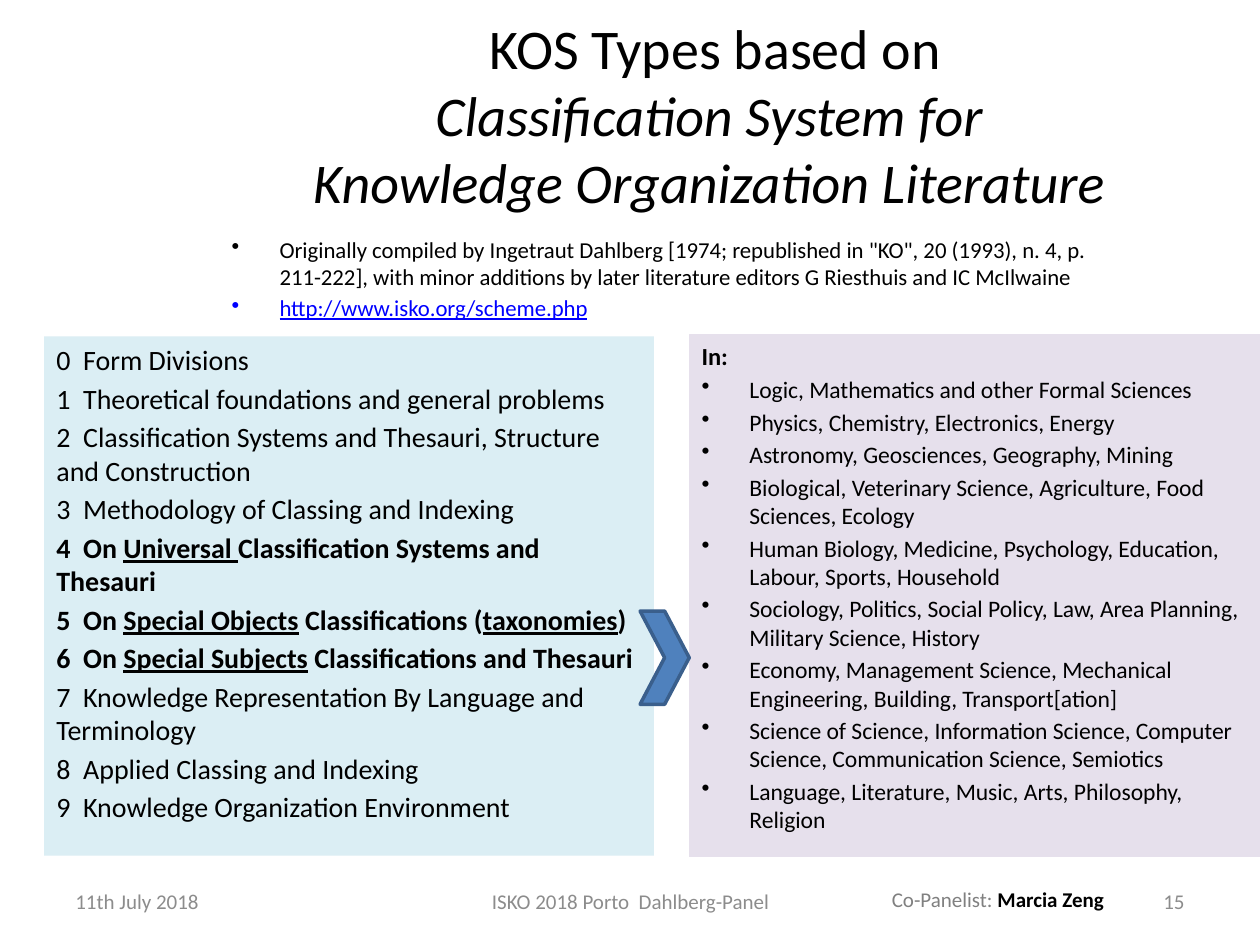
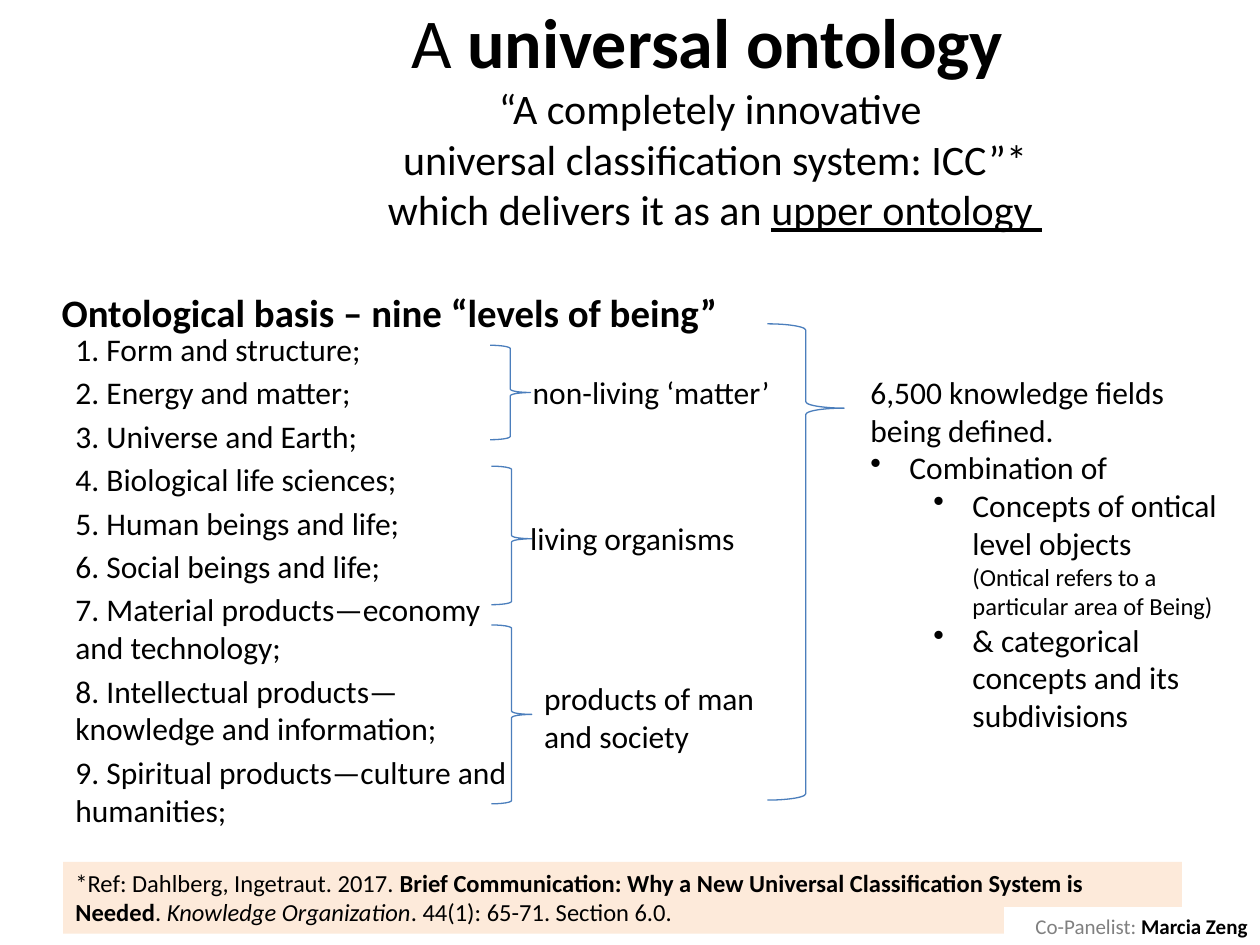
import pptx
import pptx.dml.color
import pptx.enum.shapes
import pptx.enum.text
import pptx.oxml
import pptx.oxml.ns
import pptx.util

Inches = pptx.util.Inches
Pt = pptx.util.Pt
RGB = pptx.dml.color.RGBColor
Align = pptx.enum.text.PP_ALIGN
Anchor = pptx.enum.text.MSO_ANCHOR
Preset = pptx.enum.shapes.MSO_SHAPE

FONT = "Calibri"
BLACK, WHITE = RGB(0, 0, 0), RGB(255, 255, 255)
FOOTER_GRAY, CREDIT_GRAY = RGB(0x8C, 0x8C, 0x8C), RGB(0x80, 0x80, 0x80)
LINK_BLUE = RGB(0, 0, 255)
PALE_BLUE, PALE_PURPLE = RGB(0xDB, 0xEE, 0xF4), RGB(0xE6, 0xE0, 0xEC)
PALE_ORANGE = RGB(0xFD, 0xEA, 0xDA)
CHEVRON_FILL, CHEVRON_EDGE = RGB(0x4F, 0x81, 0xBD), RGB(0x3A, 0x5F, 0x8C)
BRACE_BLUE = RGB(0x4B, 0x7E, 0xBC)

LIST_GAP = 0.176  # space before a list paragraph, as a share of its text size

BOLD = {"bold": True}
ITALIC = {"italic": True}
UNDERLINE = {"underline": True}
BOLD_UNDERLINE = {**BOLD, **UNDERLINE}

# A paragraph is a string or a list of spans; a span is a string or (text, format).
CREDIT = [[("Co-Panelist: ", {"color": CREDIT_GRAY}), ("Marcia Zeng", BOLD)]]

TYPES_TITLE = [["KOS Types based on\n",
                ("Classification System for \nKnowledge Organization Literature ", ITALIC)]]
TYPES_SOURCE = [
    'Originally compiled by Ingetraut Dahlberg [1974; republished in "KO", 20 (1993), n. 4, '
    "p. 211-222], with minor additions by later literature editors G Riesthuis and IC McIlwaine",
    [("http://www.isko.org/scheme.php", {"color": LINK_BLUE, **UNDERLINE})],
]
DIVISIONS = [
    "0  Form Divisions",
    "1  Theoretical foundations and general problems",
    "2  Classification Systems and Thesauri, Structure and Construction",
    "3  Methodology of Classing and Indexing",
    [("4  On ", BOLD), ("Universal ", BOLD_UNDERLINE),
     ("Classification Systems and Thesauri", BOLD)],
    [("5  On ", BOLD), ("Special Objects", BOLD_UNDERLINE), (" Classifications (", BOLD),
     ("taxonomies", BOLD_UNDERLINE), (")", BOLD)],
    [("6  On ", BOLD), ("Special Subjects", BOLD_UNDERLINE),
     (" Classifications and Thesauri", BOLD)],
    "7  Knowledge Representation By Language and Terminology",
    "8  Applied Classing and Indexing",
    "9  Knowledge Organization Environment",
]
SUBJECTS = [
    [("In:", {"size": Pt(14), **BOLD})],
    "Logic, Mathematics and other Formal Sciences",
    "Physics, Chemistry, Electronics, Energy",
    "Astronomy, Geosciences, Geography, Mining",
    "Biological, Veterinary Science, Agriculture, Food Sciences, Ecology",
    "Human Biology, Medicine, Psychology, Education, Labour, Sports, Household",
    "Sociology, Politics, Social Policy, Law, Area Planning, Military Science, History",
    "Economy, Management Science, Mechanical Engineering, Building, Transport[ation]",
    "Science of Science, Information Science, Computer Science, Communication Science, Semiotics",
    "Language, Literature, Music, Arts, Philosophy, Religion",
]
# text, left, width, alignment
FOOTERS = [
    ("11th July 2018", 0.5, 2.33, Align.LEFT),
    ("ISKO 2018 Porto  Dahlberg-Panel", 3.42, 3.17, Align.CENTER),
    ("15", 8.98, 0.52, Align.RIGHT),
]

SUBTITLE = {"size": Pt(24)}
ONTOLOGY_TITLE = [[
    "A ", ("universal ontology \n", BOLD),
    ("“A completely innovative \nuniversal classification system: ICC”*\n"
     "which delivers it as an ", SUBTITLE),
    ("upper ontology ", {**SUBTITLE, **UNDERLINE}),
]]
LEVELS_HEADING = [[("Ontological basis – nine “levels of being”", BOLD)]]
LEVELS = [
    "1. Form and structure;",
    "2. Energy and matter;",
    "3. Universe and Earth;",
    "4. Biological life sciences;",
    "5. Human beings and life;",
    "6. Social beings and life;",
    "7. Material products—economy and technology;",
    "8. Intellectual products—knowledge and information;",
    "9. Spiritual products—culture and humanities;",
]
# place, position of the brace point
BRACES = [
    ((3.89, 2.74, 0.32, 0.75), 0.5),
    ((3.9, 3.7, 0.32, 1.1), 0.524),
    ((3.9, 4.96, 0.32, 1.42), 0.5),
    ((6.09, 2.57, 0.61, 3.78), 0.177),
]
GROUP_LABELS = [
    ("non-living ‘matter’", (4.13, 2.91, 2.23, 0.4)),
    ("living organisms", (4.11, 4.07, 2.18, 0.4)),
    ("products of man and society", (4.22, 5.34, 2.27, 0.71)),
]
FIELDS = [
    "6,500 knowledge fields being defined.",
    "Combination of",
    ["Concepts of ontical level objects\n",
     ("(Ontical refers to a particular area of Being)", {"size": Pt(14)})],
    "& categorical concepts and its subdivisions",
]
FIELD_INDENTS = [None, 0.31, 0.81, 0.81]
REFERENCE = [[
    "*Ref: Dahlberg, Ingetraut. 2017. ",
    ("Brief Communication: Why a New Universal Classification System is Needed", BOLD),
    ". ", ("Knowledge Organization", ITALIC), ". 44(1): 65-71. Section 6.0.",
]]


def inches(place):
    return [Inches(value) for value in place]


def add_bullet(para, margin, hanging):
    properties = para._p.get_or_add_pPr()
    properties.set("marL", str(Inches(margin)))
    properties.set("indent", str(-Inches(hanging)))
    bullet = pptx.oxml.parse_xml(
        f'<a:buChar {pptx.oxml.ns.nsdecls("a")} char="•"/>')
    properties.append(bullet)


def add_span(para, text, style):
    """Add text in one format, turning newlines into line breaks."""
    for number, line in enumerate(text.split("\n")):
        if number:
            para.add_line_break()
        if not line:
            continue
        span = para.add_run()
        span.text = line
        for name, value in style.items():
            if name == "color":
                span.font.color.rgb = value
            else:
                setattr(span.font, name, value)


def add_text(page, place, paragraphs, size, color=BLACK, align=Align.LEFT,
             anchor=Anchor.TOP, fill=None, gap=0, indents=None, hanging=0):
    """Add a text box; indents holds one bullet margin, or None, per paragraph."""
    box = page.shapes.add_textbox(*inches(place))
    if fill is not None:
        box.fill.solid()
        box.fill.fore_color.rgb = fill
    frame = box.text_frame
    frame.word_wrap = True
    frame.vertical_anchor = anchor
    base = {"name": FONT, "size": Pt(size), "color": color}
    for number, content in enumerate(paragraphs):
        para = frame.add_paragraph() if number else frame.paragraphs[0]
        para.alignment = align
        if number and gap:
            para.space_before = Pt(round(size * gap, 1))
        if indents and indents[number] is not None:
            add_bullet(para, indents[number], hanging)
        for span in [content] if isinstance(content, str) else content:
            text, style = (span, {}) if isinstance(span, str) else span
            add_span(para, text, {**base, **style})
    return box


def add_title(page, place, paragraphs, size):
    add_text(page, place, paragraphs, size, align=Align.CENTER, anchor=Anchor.MIDDLE)


def add_credit(page, left, top):
    add_text(page, (left, top, 2.03, 0.3), CREDIT, 12, align=Align.RIGHT, fill=WHITE)


def add_outlined(page, preset, place, color, width):
    shape = page.shapes.add_shape(preset, *inches(place))
    shape.shadow.inherit = False
    shape.line.color.rgb = color
    shape.line.width = Pt(width)
    return shape


def build_types(page):
    add_title(page, (1.36, 0.28, 8.64, 1.25), TYPES_TITLE, 32)
    for text, left, width, align in FOOTERS:
        add_text(page, (left, 6.95, width, 0.4), [text], 12, FOOTER_GRAY, align, Anchor.MIDDLE)
    add_text(page, (1.74, 1.82, 7.19, 0.94), TYPES_SOURCE, 13, gap=LIST_GAP,
             indents=[0.38] * len(TYPES_SOURCE), hanging=0.38)
    add_text(page, (0.35, 2.67, 4.84, 4.12), DIVISIONS, 16, fill=PALE_BLUE, gap=LIST_GAP)
    subjects = add_text(page, (5.47, 2.66, 4.53, 4.14), SUBJECTS, 13.5, fill=PALE_PURPLE,
                        gap=LIST_GAP, indents=[None] + [0.38] * (len(SUBJECTS) - 1),
                        hanging=0.38)
    subjects.line.color.rgb = PALE_PURPLE
    subjects.line.width = Pt(0.75)
    chevron = add_outlined(page, Preset.CHEVRON, (5.08, 4.85, 0.39, 0.74), CHEVRON_EDGE, 2)
    chevron.fill.solid()
    chevron.fill.fore_color.rgb = CHEVRON_FILL
    add_credit(page, 6.83, 6.99)


def build_ontology(page):
    add_title(page, (1.85, 0.3, 7.65, 1.25), ONTOLOGY_TITLE, 40)
    add_text(page, (0.5, 2.57, 3.78, 4.56), LEVELS, 18, gap=LIST_GAP)
    add_text(page, (0.39, 2.24, 5.71, 0.4), LEVELS_HEADING, 22.2)
    for place, point in BRACES:
        brace = add_outlined(page, Preset.RIGHT_BRACE, place, BRACE_BLUE, 0.75)
        brace.fill.background()
        brace.adjustments[0] = 0.083
        brace.adjustments[1] = point
    for label, place in GROUP_LABELS:
        add_text(page, place, [label], 18)
    add_text(page, (0.5, 6.84, 8.88, 0.57), REFERENCE, 14, fill=PALE_ORANGE)
    add_text(page, (6.81, 2.91, 2.99, 3), FIELDS, 18, indents=FIELD_INDENTS, hanging=0.31)
    add_credit(page, 7.97, 7.2)


def main():
    deck = pptx.Presentation()
    deck.slide_width, deck.slide_height = Inches(10), Inches(7.5)
    blank = deck.slide_layouts[6]
    for build in (build_types, build_ontology):
        build(deck.slides.add_slide(blank))
    deck.save("out.pptx")


if __name__ == "__main__":
    main()
